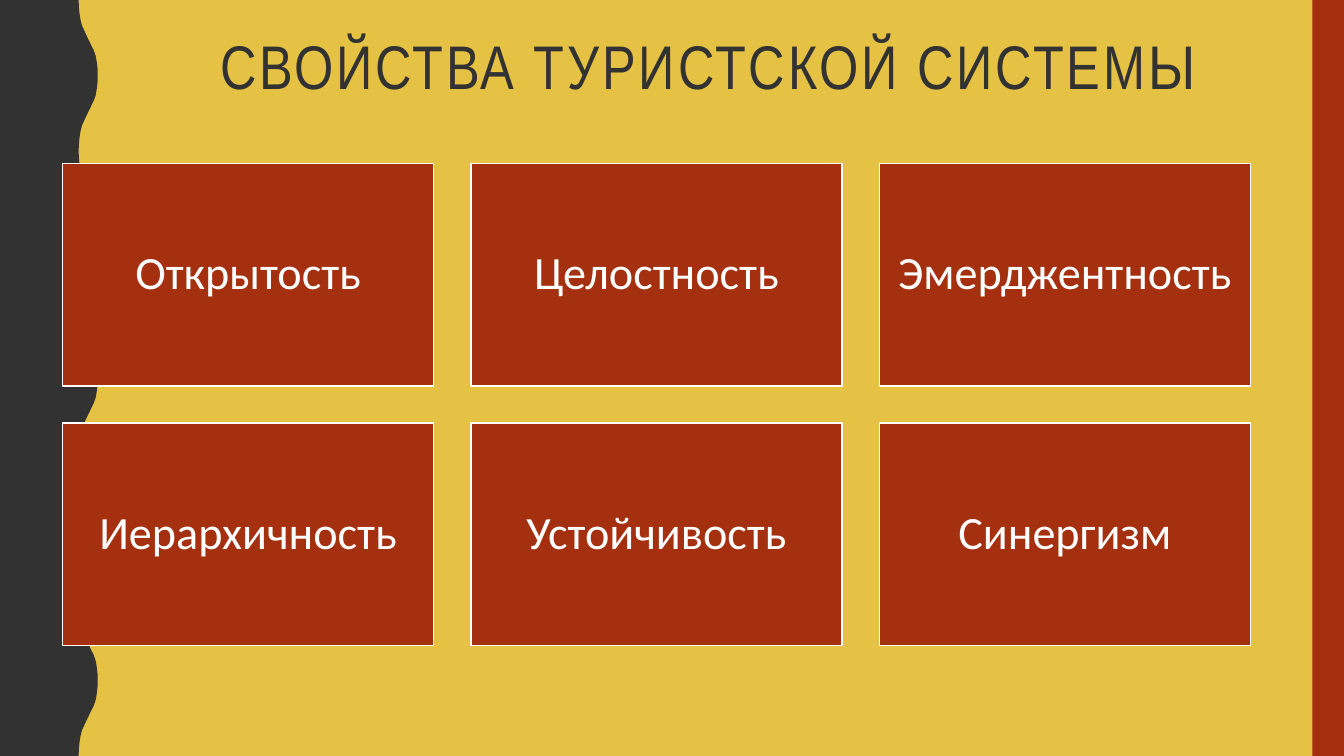
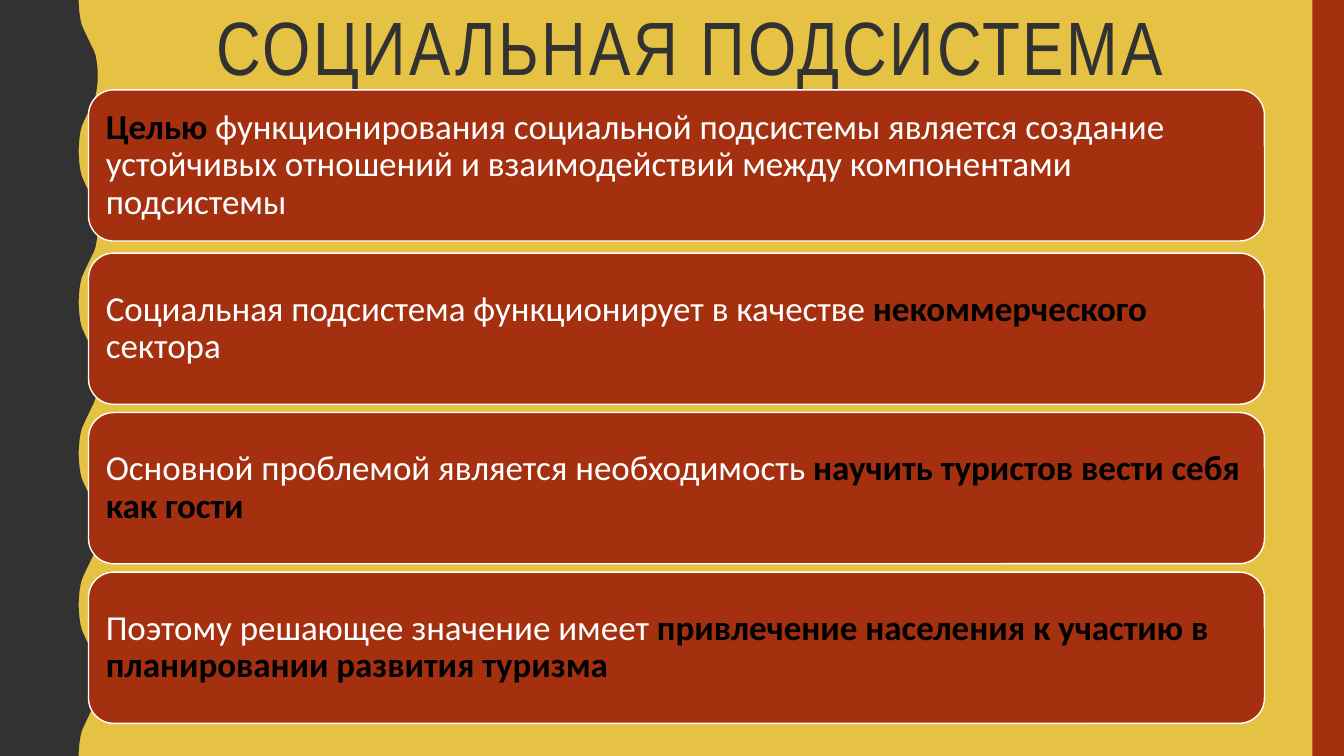
import pptx
import pptx.dml.color
import pptx.enum.shapes
import pptx.enum.text
import pptx.util

Pt = pptx.util.Pt
SHAPE = pptx.enum.shapes.MSO_SHAPE
ALIGN = pptx.enum.text.PP_ALIGN
ANCHOR = pptx.enum.text.MSO_ANCHOR

# Shared style
W, H = 960, 540
YELLOW, DARK, RED, WHITE, BLACK = "E5C243", "323232", "A5300F", "FFFFFF", "000000"
TITLE_FONT, BODY_FONT = "Arial Narrow", "Calibri"
# Half a wave of the left band: x, y; the other half is its mirror
WAVE_HEIGHT = 108
HALF_WAVE = [(56.2, 0), (56.4, 5), (56.9, 10), (57.6, 14.4), (58.5, 18), (59.8, 21),
             (61.2, 24), (62.6, 27), (64.1, 30), (65.5, 33), (67, 36), (68.3, 39.6),
             (69.1, 44), (69.7, 49), (69.8, 54)]

# Content
PROPERTIES_TITLE = "СВОЙСТВА ТУРИСТСКОЙ СИСТЕМЫ"
PROPERTIES = [
    ["Открытость", "Целостность", "Эмерджентность"],
    ["Иерархичность", "Устойчивость", "Синергизм"],
]
SOCIAL_TITLE = "СОЦИАЛЬНАЯ ПОДСИСТЕМА"
# Top of the bar, then its runs: text, emphasised
STATEMENTS = [
    (64.2, [("Целью", True),
            (" функционирования социальной подсистемы является создание устойчивых "
             "отношений и взаимодействий между компонентами подсистемы", False)]),
    (180.8, [("Социальная подсистема функционирует в качестве ", False),
             ("некоммерческого", True), (" сектора", False)]),
    (294.7, [("Основной проблемой является необходимость ", False),
             ("научить туристов вести себя как гости", True)]),
    (408.7, [("Поэтому решающее значение имеет ", False),
             ("привлечение населения к участию в планировании развития туризма", True)]),
]


def rgb(value):
    return pptx.dml.color.RGBColor.from_string(value)


def paint(sp, fill, line=None):
    sp.shadow.inherit = False
    sp.fill.solid()
    sp.fill.fore_color.rgb = rgb(fill)
    if line:
        sp.line.color.rgb = rgb(line)
        sp.line.width = Pt(1)
    else:
        sp.line.fill.background()


def style_run(r, font, size, color, bold=False):
    r.font.name = font
    r.font.size = Pt(size)
    r.font.color.rgb = rgb(color)
    r.font.bold = bold


def add_side_bands(s):
    mirrored = [(x, WAVE_HEIGHT - y) for x, y in reversed(HALF_WAVE[:-1])]
    edge = [(x, y + i * WAVE_HEIGHT)
            for i in range(H // WAVE_HEIGHT) for x, y in HALF_WAVE + mirrored]
    fb = s.shapes.build_freeform(0, 0, scale=1.0)
    fb.add_line_segments([(Pt(x), Pt(y)) for x, y in edge + [(0, H)]], close=True)
    paint(fb.convert_to_shape(), DARK)
    band = s.shapes.add_shape(SHAPE.RECTANGLE, Pt(937.5), 0, Pt(W - 937.5), Pt(H))
    paint(band, RED)


def add_title(s, text, left, top, size):
    tf = s.shapes.add_textbox(Pt(left), Pt(top), Pt(756), Pt(83)).text_frame
    tf.word_wrap = True
    p = tf.paragraphs[0]
    p.text = text
    p.line_spacing = 0.9
    r = p.runs[0]
    style_run(r, TITLE_FONT, size, DARK)
    r.font._element.set("spc", "200")  # letter spacing of 2 pt


def add_card(s, kind, box, runs, size, align, margin):
    sp = s.shapes.add_shape(kind, *(Pt(v) for v in box))
    paint(sp, RED, WHITE)
    tf = sp.text_frame
    tf.word_wrap = True
    tf.vertical_anchor = ANCHOR.MIDDLE
    tf.margin_left = tf.margin_right = tf.margin_top = tf.margin_bottom = Pt(margin)
    p = tf.paragraphs[0]
    p.alignment = align
    p.line_spacing = 0.9
    for text, strong in runs:
        r = p.add_run()
        r.text = text
        style_run(r, BODY_FONT, size, BLACK if strong else WHITE, strong)


def add_slide(prs, title, left, top, size):
    s = prs.slides.add_slide(prs.slide_layouts[6])
    s.background.fill.solid()
    s.background.fill.fore_color.rgb = rgb(YELLOW)
    add_side_bands(s)
    add_title(s, title, left, top, size)
    return s


def add_properties_slide(prs):
    s = add_slide(prs, PROPERTIES_TITLE, 150.5, 22.3, 44)
    left, top, width, height, gap = 44.7, 116.6, 265.2, 159.1, 26.5
    for i, row in enumerate(PROPERTIES):
        for j, name in enumerate(row):
            box = (left + j * (width + gap), top + i * (height + gap), width, height)
            add_card(s, SHAPE.RECTANGLE, box, [(name, False)], 33, ALIGN.CENTER, 10)


def add_social_slide(prs):
    s = add_slide(prs, SOCIAL_TITLE, 147.6, 3.6, 54)
    for top, runs in STATEMENTS:
        add_card(s, SHAPE.ROUNDED_RECTANGLE, (63.2, top, 840, 108), runs, 25,
                 ALIGN.LEFT, 7.2)


def main():
    prs = pptx.Presentation()
    prs.slide_width, prs.slide_height = Pt(W), Pt(H)
    add_properties_slide(prs)
    add_social_slide(prs)
    prs.save("out.pptx")


if __name__ == "__main__":
    main()
